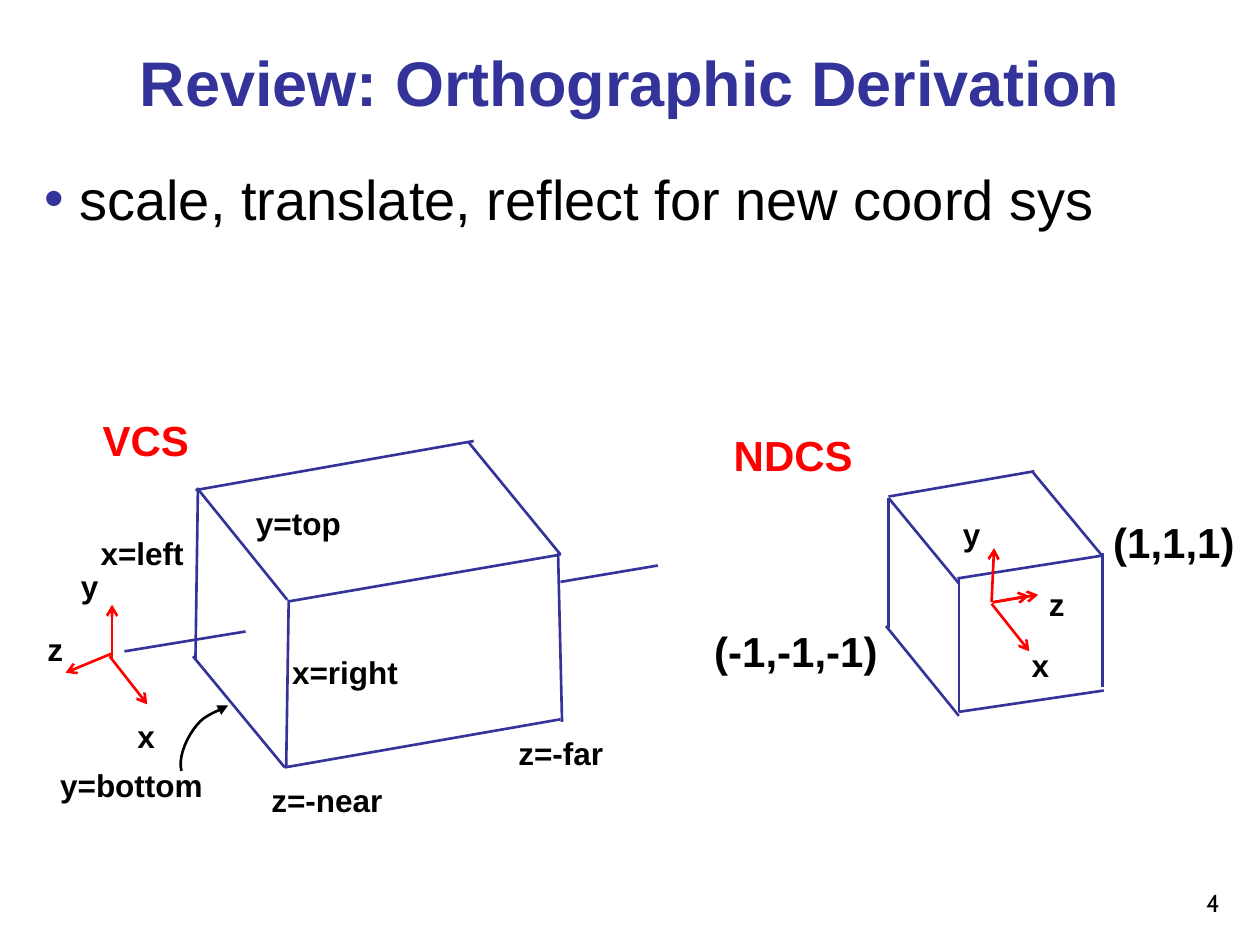
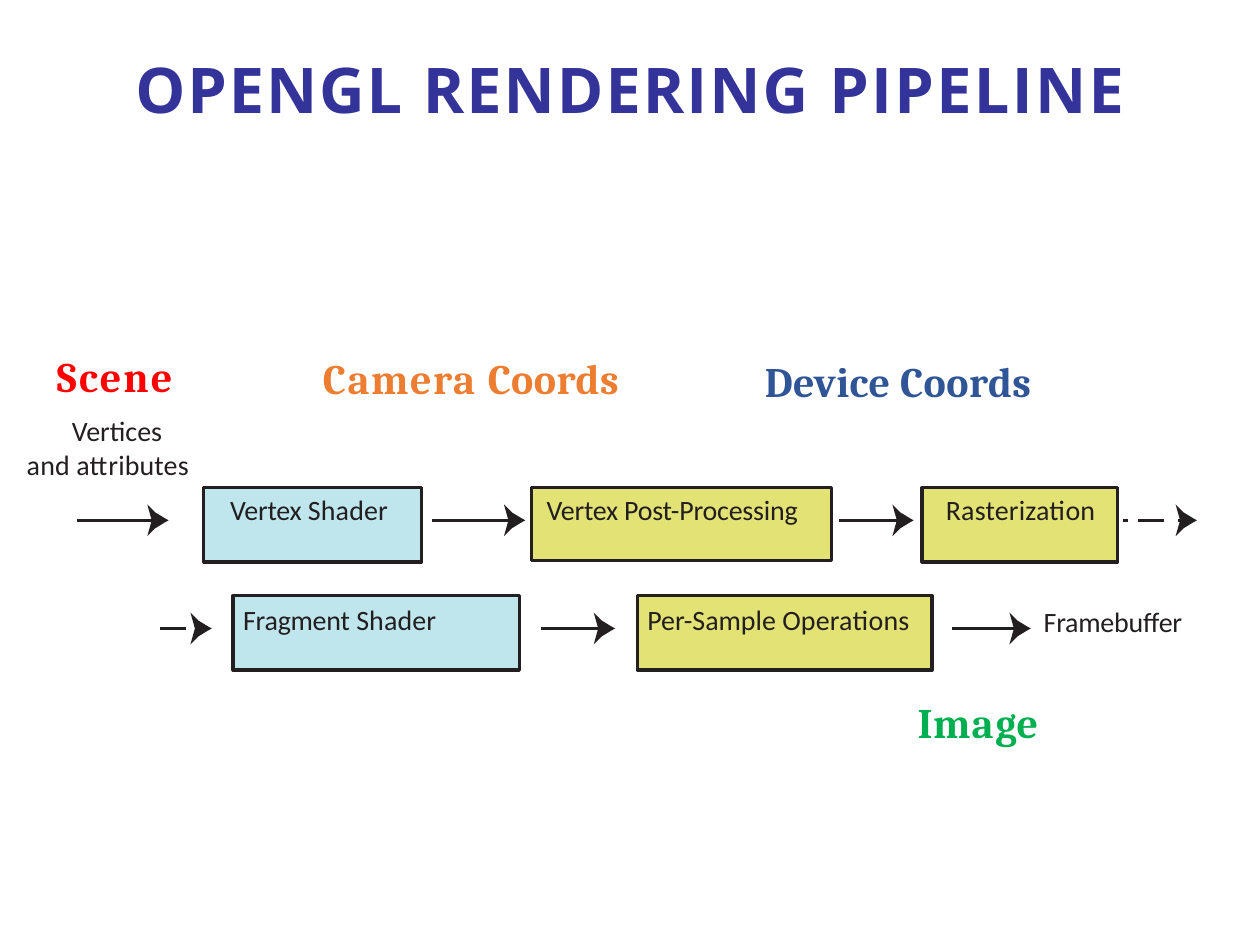
from lxml import etree
from pptx import Presentation
from pptx import util as u
from pptx.dml.color import RGBColor
from pptx.enum import dml, shapes, text
from pptx.oxml import ns

COLOURS = {
    "navy": "333399", "black": "000000", "red": "FF0000", "ink": "231F20",
    "blue": "BFE6ED", "olive": "E2E275", "orange": "ED7D31",
    "green": "00B050", "steel": "2F5597",
}
CENTRE, RIGHT = text.PP_ALIGN.CENTER, text.PP_ALIGN.RIGHT
TOP, BOTTOM = text.MSO_ANCHOR.TOP, text.MSO_ANCHOR.BOTTOM
SLIDE_WIDTH, SLIDE_HEIGHT = 25.4, 19.05
NO_INSETS = (0, 0, 0, 0)
INSETS = (0.25, 0.13, 0.25, 0.13)


def rgb(name):
    return RGBColor.from_string(COLOURS[name])


def child(parent, tag, **attributes):
    return etree.SubElement(parent, ns.qn(tag), **attributes)


def bezier(start, first, second, end, steps=12):
    """Points along a cubic curve, without its start."""
    for step in range(1, steps + 1):
        t = step / steps
        weights = ((1 - t) ** 3, 3 * t * (1 - t) ** 2, 3 * t * t * (1 - t), t ** 3)
        yield tuple(sum(w * point[axis] for w, point in
                        zip(weights, (start, first, second, end))) for axis in (0, 1))


class Painter:
    """Holds the style and the current slide."""

    def __init__(self):
        self.deck = Presentation()
        self.deck.slide_width = u.Cm(SLIDE_WIDTH)
        self.deck.slide_height = u.Cm(SLIDE_HEIGHT)
        self.page = None

    def new_page(self):
        self.page = self.deck.slides.add_slide(self.deck.slide_layouts[6])

    def frame(self, box, insets, anchor=TOP):
        frame = box.text_frame
        frame.word_wrap = True
        frame.vertical_anchor = anchor
        (frame.margin_left, frame.margin_top,
         frame.margin_right, frame.margin_bottom) = map(u.Cm, insets)
        return frame

    def text_box(self, left, top, width, height, insets=INSETS, anchor=TOP, grow=True):
        box = self.page.shapes.add_textbox(*map(u.Cm, (left, top, width, height)))
        frame = self.frame(box, insets, anchor)
        if grow:
            frame.auto_size = text.MSO_AUTO_SIZE.SHAPE_TO_FIT_TEXT
        return frame

    def fill_para(self, para, spans, size, font, colour, bold=False, align=None,
                  before_share=None, before=None, margin=0, indent=0, bullet=None):
        """Fill a paragraph; spans are (words, letter spacing in points)."""
        para.alignment = align
        properties = para._p.get_or_add_pPr()
        properties.set("marL", str(u.Cm(margin)))
        properties.set("indent", str(u.Cm(indent)))
        if before is not None:
            para.space_before = u.Pt(before)
        if before_share is not None:
            child(child(properties, "a:spcBef"), "a:spcPct", val=str(before_share * 1000))
        if bullet:
            child(child(properties, "a:buClr"), "a:srgbClr", val=COLOURS["navy"])
            child(properties, "a:buFont", typeface=font)
            child(properties, "a:buChar", char=bullet)
        for words, spacing in spans:
            span = para.add_run()
            span.text = words
            span.font.size, span.font.name, span.font.bold = u.Pt(size), font, bold
            span.font.color.rgb = rgb(colour)
            if spacing:
                span._r.get_or_add_rPr().set("spc", str(round(spacing * 100)))

    def title(self, top, spans, font, insets=INSETS, grow=False):
        frame = self.text_box(0, top, SLIDE_WIDTH, 2.54 - top, insets, BOTTOM, grow)
        self.fill_para(frame.paragraphs[0], spans, 36, font, "navy", True, CENTRE)

    def label(self, words, left, top, width=2.69, size=18, colour="black"):
        frame = self.text_box(left, top, width, 1.02 if size == 18 else 1.27)
        self.fill_para(frame.paragraphs[0], [(words, 0)], size, "Arial", colour,
                       True, CENTRE, before_share=50)

    def heading(self, spans, colour, left, top, width, height=1.02, margin=0.03):
        frame = self.text_box(left, top, width, height, NO_INSETS)
        self.fill_para(frame.paragraphs[0], spans, 24, "Cambria", colour, True,
                       before_share=20, margin=margin)
        return frame

    def stroke(self, item, colour, width, dash=None, head=None):
        item.line.color.rgb = rgb(colour)
        item.line.width = u.Pt(width)
        if dash:
            item.line.dash_style = dash
        if head:
            outline = item.element.spPr.find(ns.qn("a:ln"))
            child(outline, "a:tailEnd", type=head)

    def line(self, x1, y1, x2, y2, colour="navy", width=1.5, dash=None, head=None):
        line = self.page.shapes.add_connector(
            shapes.MSO_CONNECTOR.STRAIGHT, *map(u.Cm, (x1, y1, x2, y2)))
        self.stroke(line, colour, width, dash, head)
        child(line.element.spPr, "a:effectLst")

    def outline(self, points, close):
        points = [(u.Cm(x), u.Cm(y)) for x, y in points]
        builder = self.page.shapes.build_freeform(*points[0], scale=1.0)
        builder.add_line_segments(points[1:], close=close)
        figure = builder.convert_to_shape()
        figure.shadow.inherit = False
        return figure

    def curved_arrow(self, points):
        figure = self.outline(points, False)
        figure.fill.background()
        self.stroke(figure, "black", 1.5, head="triangle")

    def barb(self, tip, y):
        """Notched arrowhead whose point is at tip."""
        lower = [(-0.43, 0.32), (-0.35, 0.24), (-0.27, 0.16), (-0.17, 0.1), (-0.09, 0.05)]
        upper = [(x, -dy) for x, dy in reversed(lower)]
        offsets = [(-0.34, 0), *lower, (0, 0), *upper]
        figure = self.outline([(tip + x, y + dy) for x, dy in offsets], True)
        figure.fill.solid()
        figure.fill.fore_color.rgb = rgb("ink")
        figure.line.fill.background()

    def shaft(self, start, end, y, dash=None):
        self.line(start, y, end, y, "ink", 1.86, dash)

    def stage(self, spans, fill, left, top, width, height, margin, inset, before):
        box = self.page.shapes.add_shape(
            shapes.MSO_SHAPE.RECTANGLE, *map(u.Cm, (left, top, width, height)))
        box.shadow.inherit = False
        box.fill.solid()
        box.fill.fore_color.rgb = rgb(fill)
        self.stroke(box, "ink", 1.86)
        frame = self.frame(box, (0, inset, 0, 0))
        self.fill_para(frame.paragraphs[0], spans, 16, "Calibri", "ink",
                       align=text.PP_ALIGN.LEFT, before=before, margin=margin)


def orthographic_page(painter):
    painter.new_page()
    number = painter.text_box(19.56, 17.35, 5.28, 1.27, anchor=BOTTOM, grow=False)
    painter.fill_para(number.paragraphs[0], [("4", 0)], 14, "Cabin", "black", align=RIGHT)
    painter.title(0.43, [("Review: Orthographic Derivation", 0)], "Arial")
    body = painter.text_box(0.64, 3.18, 24.23, 13.87, grow=False)
    painter.fill_para(body.paragraphs[0],
                      [("scale, translate, reflect for new coord sys", 0)],
                      32, "Arial", "black", before_share=20, margin=0.71, indent=-0.71,
                      bullet="•")

    # Edges of the view volume and its viewing axis
    view_volume = [
        (3.94, 9.88, 9.55, 8.89), (5.84, 12.12, 11.3, 11.18), (11.3, 11.18, 9.45, 8.92),
        (5.79, 12.09, 3.99, 9.86), (5.74, 15.47, 3.89, 13.23), (5.77, 15.47, 5.82, 12.09),
        (3.94, 13.31, 3.99, 9.83), (11.33, 14.55, 11.25, 11.15), (5.74, 15.47, 11.3, 14.5),
        (2.51, 13.13, 4.95, 12.73), (11.3, 11.73, 13.26, 11.4),
    ]
    # Edges of the normalized cube
    unit_cube = [
        (19.33, 14.35, 22.25, 13.92), (19.3, 11.66, 22.23, 11.2), (17.91, 10.01, 20.85, 9.5),
        (19.33, 11.66, 19.33, 14.35), (22.23, 11.15, 22.23, 13.84),
        (17.91, 10.03, 17.91, 12.65), (17.86, 12.62, 19.33, 14.43),
        (17.93, 10.06, 19.33, 11.76), (20.83, 9.53, 22.2, 11.18),
    ]
    for edge in view_volume + unit_cube:
        painter.line(*edge)

    # Coordinate axes: three of the volume, then those of the cube
    for axis in [
        (2.26, 13.28, 2.26, 12.19), (2.24, 13.18, 1.32, 13.56), (2.21, 13.23, 2.97, 14.2),
        (20.02, 12.14, 20.93, 11.99), (19.99, 12.17, 20.75, 13.13),
        (19.99, 12.14, 20.04, 11.05), (20.02, 12.14, 20.75, 12.01),
    ]:
        painter.line(*axis, colour="red", head="arrow")

    # Pointer from the y=bottom label
    start, bend, end = (3.66, 15.54), (4.19, 14.43), (4.6, 14.22)
    painter.curved_arrow([start, *bezier(start, (3.56, 15.21), (3.89, 14.58), bend),
                          *bezier(bend, (4.32, 14.35), (4.47, 14.3), end)])

    # Labels
    for words, left, top in [
        ("x", 1.6, 14.33), ("z", -0.23, 12.57), ("y", 0.46, 11.3),
        ("x=left", 1.52, 10.64), ("y=top", 4.67, 10.03), ("x=right", 5.61, 13.03),
        ("z=-far", 9.96, 14.66),
        ("x", 19.63, 12.9), ("z", 19.96, 11.66), ("y", 18.24, 10.26),
    ]:
        painter.label(words, left, top)
    painter.label("z=-near", 4.8, 15.62, 3.58)
    painter.label("y=bottom", 0.86, 15.32, 3.58)
    painter.label("VCS", 1.02, 8.23, 3.84, 24, "red")
    painter.label("NDCS", 14.07, 8.53, 3.84, 24, "red")
    painter.label("(-1,-1,-1)", 13.44, 12.47, 5.21, 24)
    painter.label("(1,1,1)", 21.06, 10.29, 5.21, 24)


def pipeline_page(painter):
    painter.new_page()
    painter.title(0.99, [("OPENGL ", 1.1), ("RENDERING ", 1.2), ("PIPELINE", 1.4)],
                  "Open Sans", NO_INSETS, True)

    # Solid arrows along the two rows
    upper, lower = 10.49, 12.67
    for start, tip, y in [(1.55, 3.4, upper), (8.71, 10.59, upper), (16.92, 18.42, upper),
                          (10.9, 12.4, lower), (19.2, 20.78, lower)]:
        painter.shaft(start, tip - 0.3, y)
        painter.barb(tip, y)

    # Broken arrows where the first row continues in the second
    for start, end, y in [(22.63, 22.73, upper), (23.75, 23.83, upper), (3.99, 4.09, lower)]:
        painter.shaft(start, end, y)
    for start, tip, y in [(22.94, 24.13, upper), (3.23, 4.27, lower)]:
        painter.shaft(start, start + 0.71, y, dml.MSO_LINE.LONG_DASH)
        painter.barb(tip, y)

    # Stages: spans, fill, left, width, height, margin
    first_row = [
        ([("Vertex ", -0.1), ("Shader", 0.1)], "blue", 4.11, 4.39, 1.5, 0.53),
        ([("Vertex Post-Processing", -0.1)], "olive", 10.72, 6.05, 1.47, 0.3),
        ([("Rasterization", 0.1)], "olive", 18.59, 3.94, 1.5, 0.48),
    ]
    second_row = [
        ([("Fragment ", -0.1), ("Shader", 0.1)], "blue", 4.7, 5.77, 1.5, 0.2),
        ([("Per-Sample ", 0), ("Operations", 0.1)], "olive", 12.85, 5.94, 1.5, 0.2),
    ]
    for row, top, inset, before in [(first_row, 9.83, 0.1, 2.8),
                                    (second_row, 12.01, 0.13, 3.7)]:
        for spans, fill, left, width, height, margin in row:
            painter.stage(spans, fill, left, top, width, height, margin, inset, before)

    # Output of the pipeline
    output = painter.text_box(21.01, 12.19, 3.53, 0.69, NO_INSETS)
    painter.fill_para(output.paragraphs[0], [("Framebuffer", -0.1)], 16, "Calibri", "ink",
                      before_share=20, margin=0.03)

    # Headings, with the input under the first one
    scene = painter.heading([("Scene", 1.2)], "red", 0.51, 7.06, 3.51, 3.91, 0.64)
    vertices = scene.add_paragraph()
    painter.fill_para(vertices, [("Vertices ", 0), ("and attributes", 0.1)], 16, "Calibri",
                      "ink", before=7.3, margin=0.03, indent=0.91)
    vertices.line_spacing = 1.01
    painter.heading([("Camera ", 0.9), ("Coords", 0.3)], "orange", 6.48, 7.11, 7.01)
    painter.heading([("Device ", 0.2), ("Coords", 0.3)], "steel", 15.39, 7.16, 6.55)
    painter.heading([("I", 0.3), ("m", 0.6), ("a", 0.9), ("g", -0.1), ("e", 1.4)],
                    "green", 18.47, 14.05, 2.84)


def main():
    painter = Painter()
    orthographic_page(painter)
    pipeline_page(painter)
    painter.deck.save("out.pptx")


if __name__ == "__main__":
    main()
